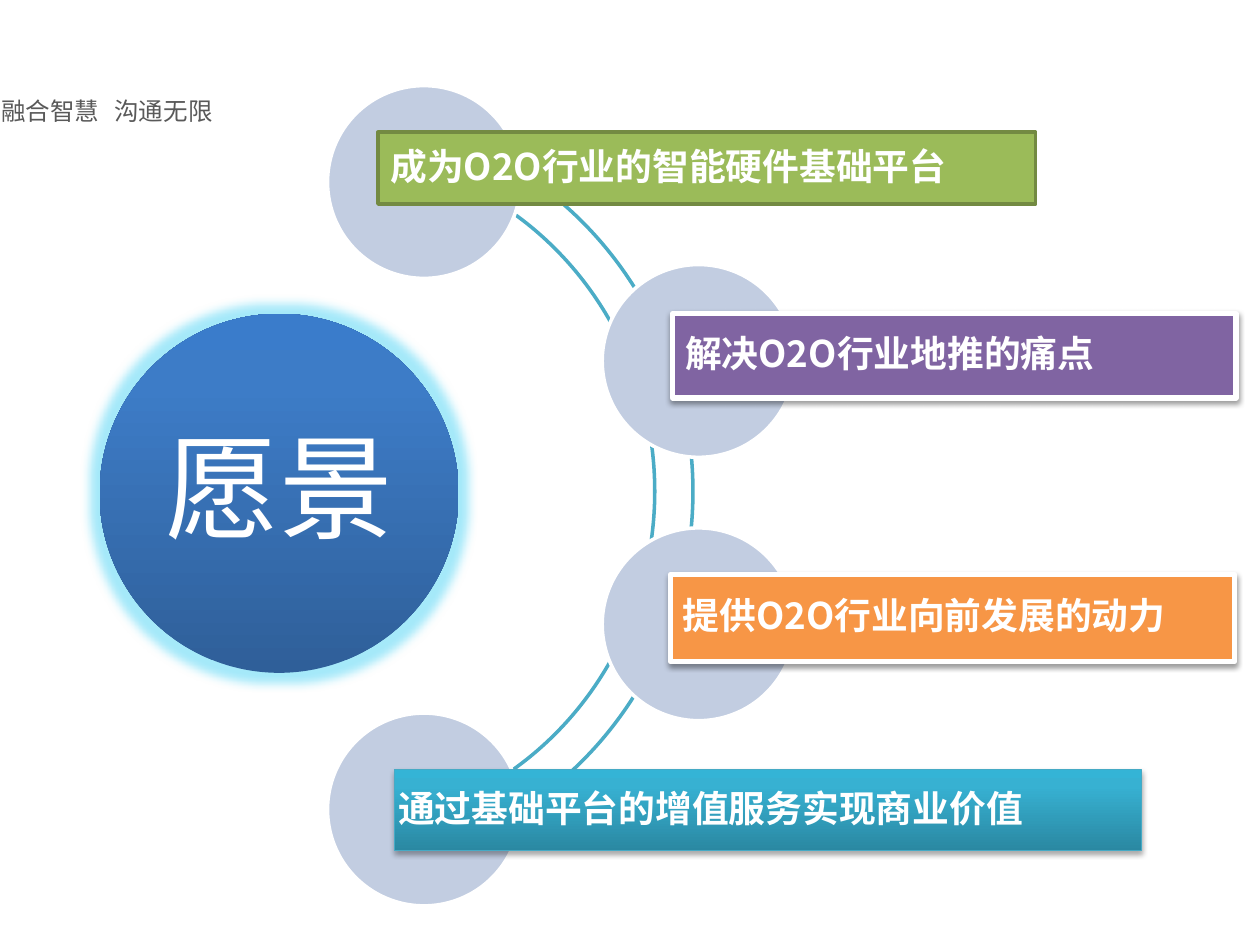
from lxml import etree
from pptx import Presentation
from pptx.dml.color import RGBColor as RGB
from pptx.enum.shapes import MSO_SHAPE as Geo
from pptx.enum.text import MSO_ANCHOR as Anchor, PP_ALIGN as Align
from pptx.oxml import parse_xml
from pptx.oxml.ns import nsdecls, qn
from pptx.util import Inches, Pt

# Content
TAGLINE = "融合智慧\t沟通无限"
HUB = "愿景"
# text, circle (left, top), bar (left, top, width, height), bar style, left inset
GOALS = [
    ("成为O2O行业的智能硬件基础平台", (2.6, 0.68), (3, 1.05, 5.22, 0.57), "green", 0.1),
    ("解决O2O行业地推的痛点", (4.78, 2.1), (5.34, 2.49, 4.47, 0.67), "purple", 0.1),
    ("提供O2O行业向前发展的动力", (4.78, 4.19), (5.32, 4.56, 4.48, 0.69), "orange", 0.1),
    ("通过基础平台的增值服务实现商业价值", (2.6, 5.66), (3.13, 6.11, 5.93, 0.64), "teal", 0.03),
]
CIRCLE_SIZE = 1.53

THEME = {
    "font": "Noto Sans CJK SC",
    "tagline_font": "Noto Sans CJK JP",
    "sizes": {"tagline": 14, "hub": 65, "goal": 21},
    "white": "FFFFFF",
    "tagline": "595959",
    "circle": "C2CDE1",
    "arc": "4BACC6",
    "glow": "1EC8F2",
    "hub": [(0, "2F5F99"), (80, "3D7CC7"), (100, "3A7CCB")],
    # fill, line colour, line width, shadow (opacity %, distance pt)
    "bars": {
        "green": ("9BBB59", "738A42", 2, None),
        "purple": ("8064A2", "FFFFFF", 3, (38, 1.6)),
        "orange": ("F79646", "FFFFFF", 3, (38, 1.6)),
        "teal": ([(0, "2A88A2"), (80, "37B1D2"), (100, "34B4D6")], "46AAC5", 0.75, (35, 1.8)),
    },
}


def add_effect(shape, tag, color, opacity, **attributes):
    """Put one glow or shadow into the shape's effect list."""
    effects = shape._element.spPr.find(qn("a:effectLst"))
    effect = etree.SubElement(effects, qn(f"a:{tag}"),
                              {name: str(value) for name, value in attributes.items()})
    tint = etree.SubElement(effect, qn("a:srgbClr"), val=color)
    etree.SubElement(tint, qn("a:alpha"), val=str(opacity * 1000))


def paint(shape, fill, line=None, width=0):
    """Solid colour, or a list of gradient stops running from bottom to top."""
    if isinstance(fill, str):
        shape.fill.solid()
        shape.fill.fore_color.rgb = RGB.from_string(fill)
    else:
        shape.fill.gradient()
        shape.fill.gradient_angle = 90
        stops = shape._element.spPr.find(qn("a:gradFill")).find(qn("a:gsLst"))
        for stop in list(stops):
            stops.remove(stop)
        for position, color in fill:
            stops.append(parse_xml(f'<a:gs {nsdecls("a")} pos="{position * 1000}">'
                                   f'<a:srgbClr val="{color}"/></a:gs>'))
    if line:
        shape.line.color.rgb = RGB.from_string(line)
        shape.line.width = Pt(width)
    else:
        shape.line.fill.background()


def add_part(shapes, geometry, box, fill, line=None, width=0):
    part = shapes.add_shape(geometry, *map(Inches, box))
    part.shadow.inherit = False
    paint(part, fill, line, width)
    return part


def write(shape, text, *, size, color=THEME["white"], font=THEME["font"], bold=False,
          align=Align.LEFT, anchor=Anchor.MIDDLE, insets=(0.03,) * 4,
          spacing=0.9, wrap=True, tab=None):
    frame = shape.text_frame
    frame.word_wrap = wrap
    frame.vertical_anchor = anchor
    (frame.margin_left, frame.margin_top,
     frame.margin_right, frame.margin_bottom) = map(Inches, insets)
    paragraph = frame.paragraphs[0]
    paragraph.alignment = align
    paragraph.line_spacing = spacing
    if tab:
        tabs = etree.SubElement(paragraph._p.get_or_add_pPr(), qn("a:tabLst"))
        etree.SubElement(tabs, qn("a:tab"), pos=str(Inches(tab)), algn="l")
    run = paragraph.add_run()
    run.text = text
    run.font.size = Pt(size)
    run.font.bold = bold
    run.font.color.rgb = RGB.from_string(color)
    run.font.name = font
    etree.SubElement(run._r.get_or_add_rPr(), qn("a:ea"), typeface=font)


def main():
    deck = Presentation()
    deck.slide_width, deck.slide_height = Inches(10), Inches(7.5)
    shapes = deck.slides.add_slide(deck.slide_layouts[6]).shapes
    sizes = THEME["sizes"]

    # Tagline
    tagline = shapes.add_textbox(*map(Inches, (-0.09, 0.71, 2.11, 0.34)))
    write(tagline, TAGLINE, size=sizes["tagline"], color=THEME["tagline"],
          font=THEME["tagline_font"], anchor=Anchor.TOP,
          insets=(0.1, 0.05, 0.1, 0.05), spacing=1, tab=0.9)

    # Glowing hub
    hub = add_part(shapes, Geo.OVAL, (0.79, 2.49, 2.85, 2.85), THEME["hub"])
    add_effect(hub, "glow", THEME["glow"], 40, rad=Pt(11))
    write(hub, HUB, size=sizes["hub"], align=Align.CENTER, insets=(0.09,) * 4, wrap=False)

    # Arc that joins the goals
    arc = add_part(shapes, Geo.BLOCK_ARC, (-0.33, 0.91, 5.83, 5.98),
                   THEME["white"], THEME["arc"], 2)
    for index, value in enumerate((165.094, 50.881, 0.052)):
        arc.adjustments[index] = value

    # Goals: a circle with a bar over it
    for text, corner, box, style, inset in GOALS:
        add_part(shapes, Geo.OVAL, (*corner, CIRCLE_SIZE, CIRCLE_SIZE),
                 THEME["circle"], THEME["white"], 2)
        fill, line, width, shadow = THEME["bars"][style]
        bar = add_part(shapes, Geo.RECTANGLE, box, fill, line, width)
        if shadow:
            opacity, distance = shadow
            add_effect(bar, "outerShdw", "000000", opacity, blurRad=Pt(3.1),
                       dist=Pt(distance), dir=90 * 60000, rotWithShape=0)
        write(bar, text, size=sizes["goal"], bold=True, insets=(inset, 0.03, 0.03, 0.03))

    deck.save("out.pptx")


if __name__ == "__main__":
    main()
